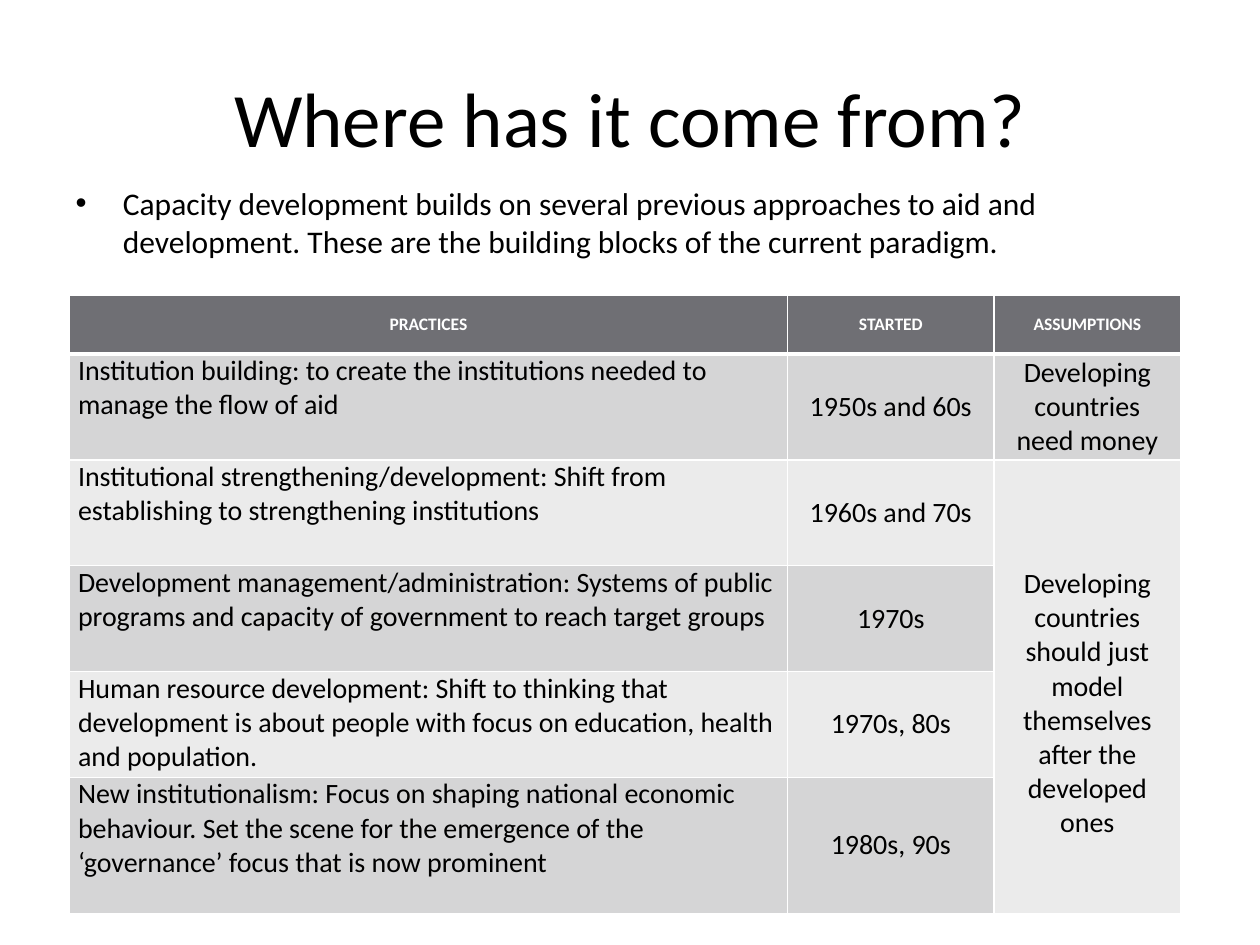
from lxml.etree import SubElement
from pptx import Presentation
from pptx.dml.color import RGBColor
from pptx.enum.text import MSO_ANCHOR, PP_ALIGN
from pptx.oxml.ns import qn
from pptx.util import Inches, Pt

TITLE = "Where has it come from?"
INTRO = ("Capacity development builds on several previous approaches to aid and "
         "development. These are the building blocks of the current paradigm.")
HEADERS = ["PRACTICES", "STARTED", "ASSUMPTIONS"]
PRACTICES = [
    ("Institution building: to create the institutions needed to manage the flow of aid",
     "1950s and 60s"),
    ("Institutional strengthening/development: Shift from establishing to "
     "strengthening institutions", "1960s and 70s"),
    ("Development management/administration: Systems of public programs and "
     "capacity of government to reach target groups", "1970s"),
    ("Human resource development: Shift to thinking that development is about "
     "people with focus on education, health and population.", "1970s, 80s"),
    ("New institutionalism: Focus on shaping national economic behaviour. Set the "
     "scene for the emergence of the ‘governance’ focus that is now prominent",
     "1980s, 90s"),
]
ASSUMPTIONS = [
    "Developing countries need money",
    "Developing countries should just model themselves after the developed ones",
]

COLUMN_WIDTHS = [5.7, 1.64, 1.48]
ROW_HEIGHTS = [0.47] + [0.84] * 4 + [1.08]

BLACK = RGBColor(0x00, 0x00, 0x00)
WHITE = RGBColor(0xFF, 0xFF, 0xFF)
HEADER_GREY = RGBColor(0x6F, 0x6F, 0x74)
BANDS = [RGBColor(0xD5, 0xD5, 0xD6), RGBColor(0xEB, 0xEB, 0xEB)]


def write(frame, text, size, color=BLACK, bold=False, align=None):
    frame.text = text
    paragraph = frame.paragraphs[0]
    paragraph.alignment = align
    font = paragraph.runs[0].font
    font.name, font.size, font.bold = "Calibri", Pt(size), bold
    font.color.rgb = color
    return paragraph


def place(shape, left, top, width, height):
    shape.left, shape.top = Inches(left), Inches(top)
    shape.width, shape.height = Inches(width), Inches(height)


def style_cell(cell, fill, bottom_width):
    """Set white borders, the fill and the insets of a cell."""
    properties = cell._tc.get_or_add_tcPr()
    for side, width in (("L", 1), ("R", 1), ("T", 1), ("B", bottom_width)):
        line = SubElement(properties, qn(f"a:ln{side}"), w=str(Pt(width)))
        SubElement(SubElement(line, qn("a:solidFill")), qn("a:srgbClr"), val=str(WHITE))
    cell.fill.solid()
    cell.fill.fore_color.rgb = fill
    cell.margin_left = cell.margin_right = Inches(0.07)
    cell.margin_top = cell.margin_bottom = 0


def add_practices_table(slide):
    table = slide.shapes.add_table(
        len(ROW_HEIGHTS), len(COLUMN_WIDTHS), Inches(0.55), Inches(2.34),
        Inches(sum(COLUMN_WIDTHS)), Inches(sum(ROW_HEIGHTS))).table
    for column, width in zip(table.columns, COLUMN_WIDTHS):
        column.width = Inches(width)
    for row, height in zip(table.rows, ROW_HEIGHTS):
        row.height = Inches(height)

    assumptions = ASSUMPTIONS + [""] * (len(PRACTICES) - len(ASSUMPTIONS))
    rows = [HEADERS] + [(*practice, assumption)
                        for practice, assumption in zip(PRACTICES, assumptions)]
    table.cell(2, 2).merge(table.cell(len(PRACTICES), 2))
    for r, texts in enumerate(rows):
        header = r == 0
        for c, text in enumerate(texts):
            cell = table.cell(r, c)
            fill = HEADER_GREY if header else BANDS[(r - 1) % 2]
            style_cell(cell, fill, 3 if header else 1)
            if not text:
                continue
            centred = header or c > 0
            cell.vertical_anchor = MSO_ANCHOR.MIDDLE if centred else MSO_ANCHOR.TOP
            write(cell.text_frame, text, 10 if header else 16,
                  color=WHITE if header else BLACK, bold=header,
                  align=PP_ALIGN.CENTER if centred else PP_ALIGN.LEFT)
    table.cell(2, 2).margin_top = Inches(0.27)


def main():
    deck = Presentation()
    deck.slide_width, deck.slide_height = Inches(10), Inches(7.5)
    slide = deck.slides.add_slide(deck.slide_layouts[1])
    title, body = slide.placeholders
    place(title, 0.5, 0.3, 9, 1.25)
    write(title.text_frame, TITLE, 44, align=PP_ALIGN.CENTER)
    place(body, 0.5, 1.41, 9, 5.29)
    write(body.text_frame, INTRO, 18)
    add_practices_table(slide)
    deck.save("out.pptx")


if __name__ == "__main__":
    main()
